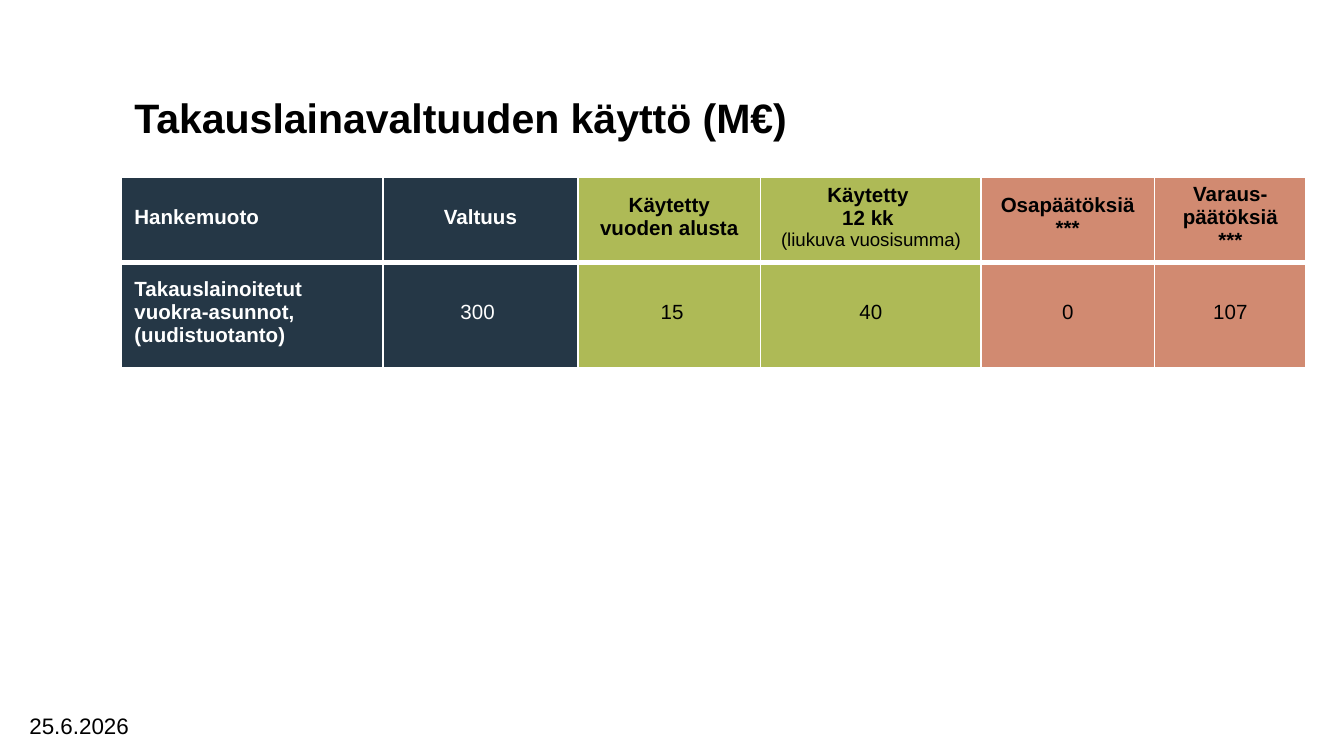
import pptx
import pptx.dml.color
import pptx.enum.text
import pptx.oxml
import pptx.oxml.ns
import pptx.util

Inches = pptx.util.Inches
Pt = pptx.util.Pt
ALIGN = pptx.enum.text.PP_ALIGN
MIDDLE = pptx.enum.text.MSO_ANCHOR.MIDDLE

COLORS = {"navy": "253746", "green": "AEBA56", "coral": "D18A71",
          "white": "FFFFFF", "black": "000000"}
COLUMNS = [(1.95, "navy"), (1.45, "navy"), (1.36, "green"),
           (1.64, "green"), (1.29, "coral"), (1.13, "coral")]
ROW_HEIGHTS = [0.44, 0.79]
HEADERS = [["Hankemuoto"], ["Valtuus"], ["Käytetty vuoden alusta"],
           ["Käytetty \n12 kk ", "(liukuva vuosisumma)"],
           ["Osapäätöksiä", "***"], ["Varaus-päätöksiä", "***"]]
VALUES = [["Takauslainoitetut vuokra-asunnot, (uudistuotanto)"],
          ["300 "], [" 15"], ["40"], ["0"], ["107"]]


def rgb(name):
    return pptx.dml.color.RGBColor.from_string(COLORS[name])


def add_text(p, text, size, color="black", bold=False):
    for i, line in enumerate(text.split("\n")):
        if i:
            p.add_line_break()
        r = p.add_run()
        r.text = line
        r.font.name = "Arial"
        r.font.size = Pt(size)
        r.font.bold = bold
        r.font.color.rgb = rgb(color)


def set_borders(cell, widths):
    tcPr = cell._tc.get_or_add_tcPr()
    for side, width in widths.items():
        tcPr.append(pptx.oxml.parse_xml(
            f'<a:ln{side} {pptx.oxml.ns.nsdecls("a")} w="{Pt(width)}"><a:solidFill>'
            f'<a:srgbClr val="{COLORS["white"]}"/></a:solidFill></a:ln{side}>'))


def add_title(s, x, y, w, h):
    sp = s.shapes.title
    sp.left, sp.top, sp.width, sp.height = map(Inches, (x, y, w, h))
    tf = sp.text_frame
    tf.word_wrap = True
    tf.auto_size = pptx.enum.text.MSO_AUTO_SIZE.NONE
    tf.vertical_anchor = MIDDLE
    p = tf.paragraphs[0]
    p.alignment = ALIGN.LEFT
    add_text(p, "Takauslainavaltuuden käyttö (M€)", 22, bold=True)


def fill_cell(cell, paragraphs, row, col):
    fill = COLUMNS[col][1]
    set_borders(cell, {"L": 1, "R": 1, "T": 3 if row else 1, "B": 1 if row else 3})
    cell.fill.solid()
    cell.fill.fore_color.rgb = rgb(fill)
    cell.vertical_anchor = MIDDLE
    cell.margin_left = cell.margin_right = Inches(0.1)
    cell.margin_top, cell.margin_bottom = Inches(0.04), Inches(0.08)
    tf = cell.text_frame
    for i, text in enumerate(paragraphs):
        p = tf.add_paragraph() if i else tf.paragraphs[0]
        p.alignment = ALIGN.CENTER if col else ALIGN.LEFT
        note = text.startswith("(")
        add_text(p, text, 10 if note else 11,
                 "white" if fill == "navy" else "black",
                 not note and (row == 0 or col == 0))


def add_loan_table(s, x, y, h):
    w = sum(width for width, _ in COLUMNS)
    table = s.shapes.add_table(2, len(COLUMNS), Inches(x), Inches(y),
                               Inches(w), Inches(h)).table
    for col, (width, _) in enumerate(COLUMNS):
        table.columns[col].width = Inches(width)
    for row, texts in enumerate((HEADERS, VALUES)):
        table.rows[row].height = Inches(ROW_HEIGHTS[row])
        for col, paragraphs in enumerate(texts):
            fill_cell(table.cell(row, col), paragraphs, row, col)


def add_date(s, x, y, w, h):
    tf = s.shapes.add_textbox(*map(Inches, (x, y, w, h))).text_frame
    tf.word_wrap = True
    add_text(tf.paragraphs[0], "25.6.2026", 12)


def main():
    prs = pptx.Presentation()
    prs.slide_width = Inches(10)
    prs.slide_height = prs.slide_width * 9 // 16
    s = prs.slides.add_slide(prs.slide_layouts[5])
    add_title(s, 0.9, 0.68, 6.86, 0.38)
    add_loan_table(s, 0.9, 1.32, 1.46)
    add_date(s, 0.12, 5.25, 1.75, 0.25)
    prs.save("out.pptx")


if __name__ == "__main__":
    main()
